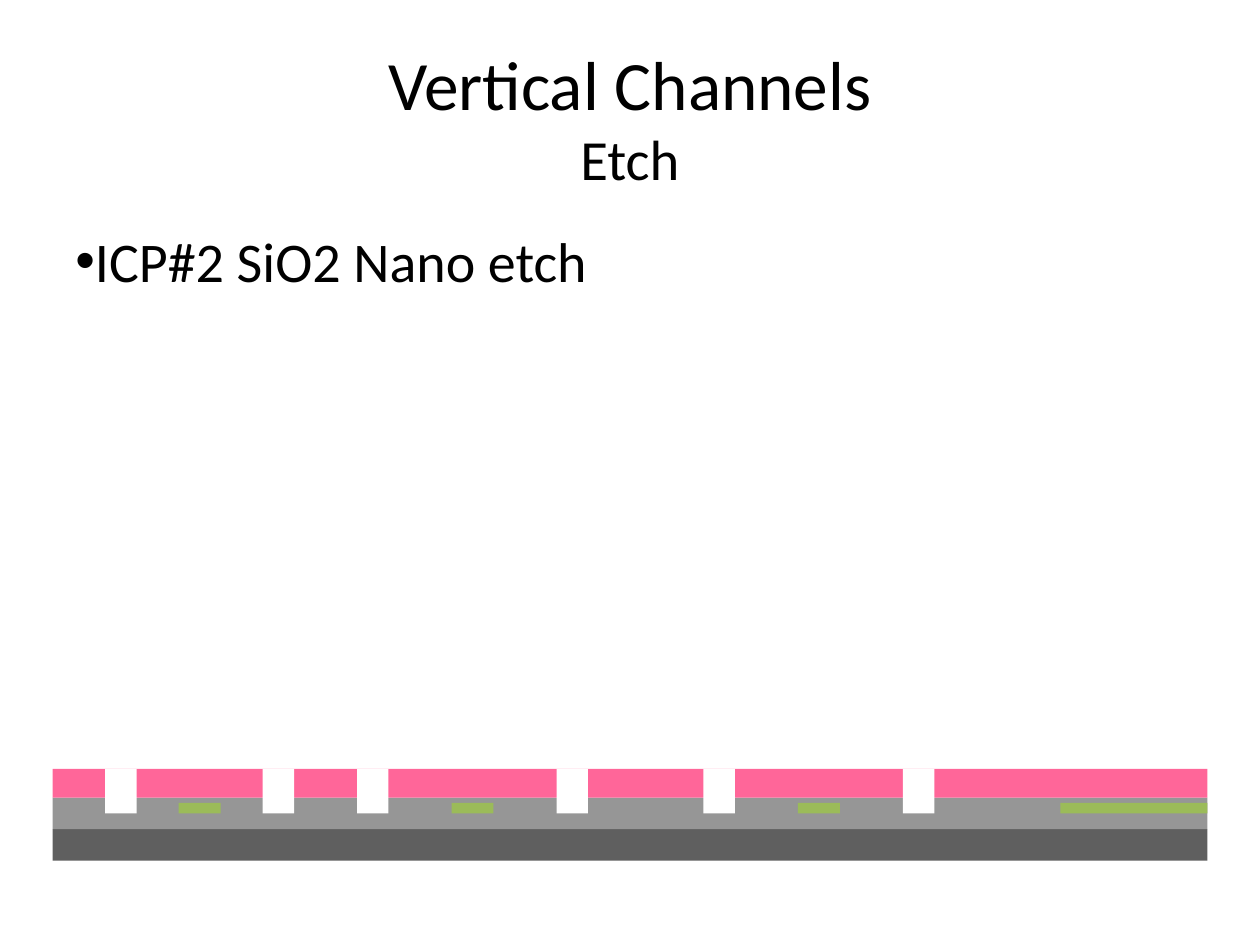
from pptx import Presentation
from pptx.dml.color import RGBColor
from pptx.enum.shapes import MSO_SHAPE as Geo
from pptx.enum.text import MSO_ANCHOR as Anchor, PP_ALIGN as Align
from pptx.oxml import parse_xml
from pptx.oxml.ns import nsdecls
from pptx.util import Cm, Pt

COLS = 110
SLOTS = (5, 20, 29, 48, 62, 81)
METAL = ((12, 4), (38, 4), (71, 4), (96, 14))


def hue(code):
    """Turn a hex string into a colour."""
    return RGBColor.from_string(code)


def style(item, fmt):
    """Set attributes of an item from a dict."""
    for key, val in fmt.items():
        setattr(item, key, val)


def write(para, text, size):
    """Add a run of black Calibri text."""
    run = para.add_run()
    run.text = text
    style(run.font, {"name": "Calibri", "size": Pt(size)})
    run.font.color.rgb = hue("000000")


def frame(slide, box, anchor):
    """Add a wrapping text box and return its first paragraph."""
    text = slide.shapes.add_textbox(*map(Cm, box)).text_frame
    style(text, {"word_wrap": True, "vertical_anchor": anchor})
    return text.paragraphs[0]


def title(slide, box):
    """Place the heading and its smaller second line."""
    para = frame(slide, box, Anchor.MIDDLE)
    para.alignment = Align.CENTER
    write(para, "Vertical Channels", 39.6)
    para.add_line_break()
    write(para, "Etch", 32.4)


def body(slide, box):
    """Place the bulleted step."""
    para = frame(slide, box, Anchor.TOP)
    style(para, {"alignment": Align.LEFT, "space_before": Pt(6.4)})
    write(para, "ICP#2 SiO2 Nano etch", 32)
    props = para._p.get_or_add_pPr()
    style(props, {"marL": Cm(0.95), "indent": -Cm(0.95)})
    for tag in ('buFont {} typeface="Arial"', 'buChar {} char="•"'):
        props.append(parse_xml("<a:" + tag.format(nsdecls("a")) + "/>"))


def block(slide, box, code):
    """Draw one plain filled rectangle."""
    rect = slide.shapes.add_shape(Geo.RECTANGLE, *map(Cm, box))
    rect.shadow.inherit = False
    rect.fill.solid()
    rect.fill.fore_color.rgb = hue(code)
    rect.line.fill.background()


def wafer(slide, box):
    """Draw the layer stack with etched slots and buried metal."""
    left, top, width, height = box
    unit = width / COLS
    base = top + height

    def layer(col, span, y, tall, code):
        """Draw a piece of a layer on the column grid."""
        block(slide, (left + col * unit, y, span * unit, tall), code)

    layer(0, COLS, base - 3 * unit, 3 * unit, "5F5F5F")
    layer(0, COLS, base - 6 * unit, 3 * unit, "969696")
    for col, span in METAL:
        layer(col, span, base - 5.5 * unit, unit, "9BBB59")
    layer(0, COLS, top, height - 6 * unit, "FF6699")
    for col in SLOTS:
        layer(col, 3, top, height - 4.5 * unit, "FFFFFF")


def main():
    """Build and save the slide."""
    deck = Presentation()
    style(deck, {"slide_width": Cm(25.4), "slide_height": Cm(19.05)})
    slide = deck.slides.add_slide(deck.slide_layouts[6])
    title(slide, (1.27, 0.76, 22.86, 3.18))
    body(slide, (1.27, 4.45, 22.86, 12.57))
    wafer(slide, (1.06, 15.5, 23.28, 1.85))
    deck.save("out.pptx")


if __name__ == "__main__":
    main()
